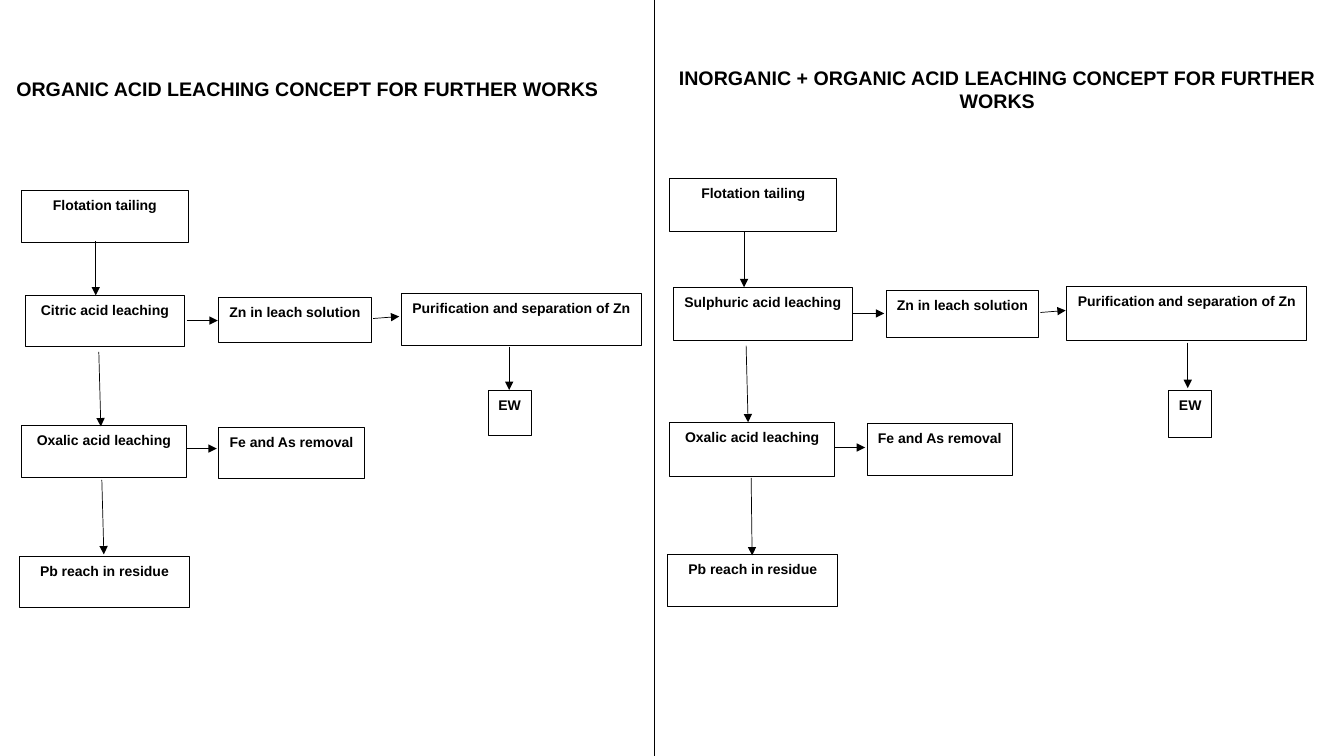
from lxml import etree
from pptx import Presentation
from pptx.dml.color import RGBColor
from pptx.enum.shapes import MSO_CONNECTOR, MSO_SHAPE
from pptx.enum.text import MSO_ANCHOR, PP_ALIGN
from pptx.oxml.ns import qn
from pptx.util import Inches, Pt

RECTANGLE = MSO_SHAPE.RECTANGLE
STRAIGHT = MSO_CONNECTOR.STRAIGHT
TOP = MSO_ANCHOR.TOP
CENTER = PP_ALIGN.CENTER
COLORS = {"ink": "000000", "paper": "FFFFFF"}
INK = RGBColor.from_string(COLORS["ink"])
PAPER = RGBColor.from_string(COLORS["paper"])
LINE_WIDTH = Pt(0.5)

# Each title: text, left, top, width, height, wraps
titles = [
    ("ORGANIC ACID LEACHING CONCEPT FOR FURTHER WORKS", 0.04, 0.71, 6.02, 0.34, False),
    ("INORGANIC + ORGANIC ACID LEACHING CONCEPT FOR FURTHER WORKS",
     6.6, 0.6, 6.58, 0.57, True),
]

# Each step: text, left, top, width, height
organic_steps = [
    ("Flotation tailing", 0.21, 1.89, 1.66, 0.51),
    ("Citric acid leaching", 0.25, 2.93, 1.58, 0.51),
    ("Zn in leach solution", 2.17, 2.95, 1.51, 0.45),
    ("Purification and separation of Zn", 3.98, 2.91, 2.38, 0.52),
    ("EW", 4.84, 3.87, 0.43, 0.45),
    ("Oxalic acid leaching", 0.21, 4.22, 1.64, 0.52),
    ("Fe and As removal", 2.17, 4.24, 1.44, 0.51),
    ("Pb reach in residue", 0.19, 5.52, 1.69, 0.51),
]
inorganic_steps = [
    ("Flotation tailing", 6.64, 1.77, 1.66, 0.53),
    ("Sulphuric acid leaching", 6.68, 2.85, 1.77, 0.53),
    ("Zn in leach solution", 8.79, 2.88, 1.51, 0.47),
    ("Purification and separation of Zn", 10.58, 2.84, 2.38, 0.54),
    ("EW", 11.59, 3.87, 0.43, 0.47),
    ("Oxalic acid leaching", 6.64, 4.19, 1.64, 0.54),
    ("Fe and As removal", 8.6, 4.2, 1.44, 0.52),
    ("Pb reach in residue", 6.62, 5.5, 1.69, 0.52),
]

# Each flow: start x, start y, end x, end y
organic_flows = [
    (0.95, 2.39, 0.95, 2.93),
    (1.85, 3.18, 2.16, 3.18),
    (3.7, 3.16, 3.96, 3.14),
    (5.05, 3.44, 5.05, 3.87),
    (0.98, 3.49, 1, 4.23),
    (1.85, 4.45, 2.15, 4.45),
    (1.01, 4.76, 1.03, 5.5),
]
inorganic_flows = [
    (7.38, 2.3, 7.38, 2.85),
    (8.46, 3.11, 8.77, 3.11),
    (10.32, 3.1, 10.57, 3.08),
    (11.78, 3.4, 11.78, 3.85),
    (7.4, 3.43, 7.42, 4.19),
    (8.28, 4.44, 8.58, 4.44),
    (7.45, 4.74, 7.46, 5.51),
]
divider = (6.49, 0, 6.49, 7.5)

prs = Presentation()
prs.slide_width, prs.slide_height = Inches(13.33), Inches(7.5)
slide = prs.slides.add_slide(prs.slide_layouts[6])


def write_bold(shape, text, size, wraps):
    frame = shape.text_frame
    frame.text = text
    frame.word_wrap = wraps
    frame.vertical_anchor = TOP
    paragraph = frame.paragraphs[0]
    paragraph.alignment = CENTER
    font = paragraph.runs[0].font
    font.name, font.size, font.bold = "Arial", Pt(size), True
    font.color.rgb = INK
    return paragraph


def draw_line(ends, arrow):
    line = slide.shapes.add_connector(STRAIGHT, *[Inches(v) for v in ends])
    line.line.color.rgb = INK
    line.line.width = LINE_WIDTH
    if arrow:
        etree.SubElement(line.line._get_or_add_ln(), qn("a:tailEnd"), type="triangle")
    etree.SubElement(line._element.spPr, qn("a:effectLst"))


for text, *place in organic_steps + inorganic_steps:
    step = slide.shapes.add_shape(RECTANGLE, *[Inches(v) for v in place])
    step.shadow.inherit = False
    step.fill.solid()
    step.fill.fore_color.rgb = PAPER
    step.line.color.rgb = INK
    step.line.width = LINE_WIDTH
    label = write_bold(step, text, 10, False)
    label.line_spacing = 1.07
    label.space_after = Pt(8)

for flow in organic_flows + inorganic_flows:
    draw_line(flow, arrow=True)
draw_line(divider, arrow=False)

for text, *place, wraps in titles:
    title = slide.shapes.add_textbox(*[Inches(v) for v in place])
    write_bold(title, text, 14, wraps)

prs.save("out.pptx")
